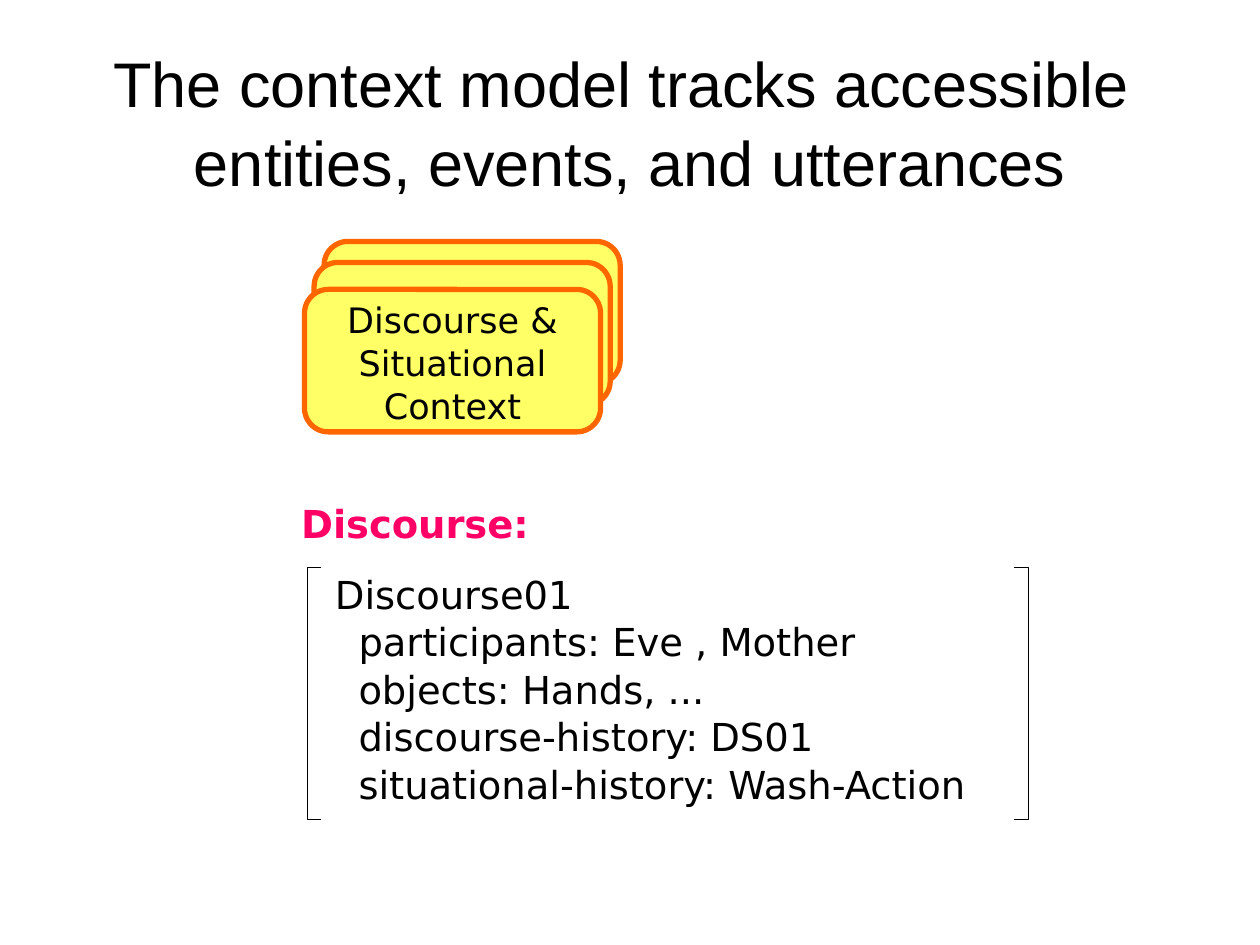
"""Build the slide on the discourse context model."""
from dataclasses import dataclass

from lxml import etree
from pptx import Presentation
from pptx.dml.color import RGBColor
from pptx.enum import shapes, text
from pptx.oxml import ns
from pptx.util import Pt

BLACK = RGBColor(0x00, 0x00, 0x00)
WHITE = RGBColor(0xFF, 0xFF, 0xFF)
YELLOW = RGBColor(0xFF, 0xFF, 0x66)
ORANGE = RGBColor(0xFF, 0x66, 0x00)
PINK = RGBColor(0xFF, 0x00, 0x66)
BODY_FONT = "DejaVu Sans"


@dataclass(frozen=True)
class Box:
    left: float
    top: float
    width: float
    height: float

    def lengths(self) -> tuple:
        return Pt(self.left), Pt(self.top), Pt(self.width), Pt(self.height)


@dataclass(frozen=True)
class Style:
    size: float
    color: RGBColor = BLACK
    font: str = BODY_FONT
    bold: bool = False
    align: text.PP_ALIGN = text.PP_ALIGN.LEFT
    spacing: float = 1.03
    tabs: tuple = ()


@dataclass(frozen=True)
class Insets:
    left: float = 0
    top: float = 0


def write(frame, lines: list[str], style: Style, insets: Insets, anchor=text.MSO_ANCHOR.TOP) -> None:
    frame.word_wrap = True
    frame.auto_size = text.MSO_AUTO_SIZE.NONE
    frame.vertical_anchor = anchor
    frame.margin_left, frame.margin_top = Pt(insets.left), Pt(insets.top)
    frame.margin_right = frame.margin_bottom = 0
    for index, line in enumerate(lines):
        paragraph = frame.paragraphs[0] if index == 0 else frame.add_paragraph()
        paragraph.text = line
        paragraph.alignment = style.align
        paragraph.line_spacing = style.spacing
        if style.tabs:
            tab_list = etree.SubElement(paragraph._p.get_or_add_pPr(), ns.qn("a:tabLst"))
            for position in style.tabs:
                etree.SubElement(tab_list, ns.qn("a:tab"), pos=str(Pt(position)), algn="l")
        font = paragraph.font
        font.name, font.size, font.bold = style.font, Pt(style.size), style.bold
        font.color.rgb = style.color


def add_card(slide, box: Box):
    card = slide.shapes.add_shape(shapes.MSO_SHAPE.ROUNDED_RECTANGLE, *box.lengths())
    card.shadow.inherit = False
    card.adjustments[0] = 0.167
    card.fill.solid()
    card.fill.fore_color.rgb = YELLOW
    card.line.color.rgb = ORANGE
    card.line.width = Pt(3)
    return card


def add_bracket(slide, kind: shapes.MSO_SHAPE, box: Box) -> None:
    bracket = slide.shapes.add_shape(kind, *box.lengths())
    bracket.shadow.inherit = False
    bracket.adjustments[0] = 0
    bracket.fill.background()
    bracket.line.color.rgb = BLACK
    bracket.line.width = Pt(0.5)


def add_text(slide, box: Box, lines: list[str], style: Style, insets: Insets) -> None:
    write(slide.shapes.add_textbox(*box.lengths()).text_frame, lines, style, insets)


def main() -> None:
    deck = Presentation()
    deck.slide_width, deck.slide_height = Pt(720), Pt(540)
    slide = deck.slides.add_slide(deck.slide_layouts[5])
    slide.background.fill.solid()
    slide.background.fill.fore_color.rgb = WHITE

    title = slide.shapes.title
    title.left, title.top, title.width, title.height = Box(36, 21.6, 648, 90).lengths()
    write(
        title.text_frame,
        ["The context model tracks accessible \ventities, events, and utterances"],
        Style(36, font="Arial", align=text.PP_ALIGN.CENTER, spacing=1.05),
        Insets(top=3.6),
        text.MSO_ANCHOR.MIDDLE,
    )

    for left, top in ((185.2, 138), (179.5, 150), (174, 165.4)):
        context_card = add_card(slide, Box(left, top, 169.2, 81.4))
    write(
        context_card.text_frame,
        ["Discourse & Situational Context"],
        Style(20, align=text.PP_ALIGN.CENTER),
        Insets(top=1.5),
        text.MSO_ANCHOR.MIDDLE,
    )

    add_bracket(slide, shapes.MSO_SHAPE.LEFT_BRACKET, Box(175.7, 324, 7.9, 144))
    add_bracket(slide, shapes.MSO_SHAPE.RIGHT_BRACKET, Box(579.6, 324, 7.9, 144))
    add_text(
        slide,
        Box(184.3, 324, 395.3, 139.7),
        [
            "Discourse01",
            "\tparticipants: Eve , Mother",
            "\tobjects: Hands, ...",
            "\tdiscourse-history: DS01",
            "\tsituational-history: Wash-Action",
        ],
        Style(22, tabs=(13.5, 27)),
        Insets(7.2, 1.5),
    )
    add_text(
        slide,
        Box(167.8, 282.2, 306.7, 25.2),
        ["Discourse:"],
        Style(22, PINK, bold=True),
        Insets(4.3, 2.9),
    )
    deck.save("out.pptx")


if __name__ == "__main__":
    main()
